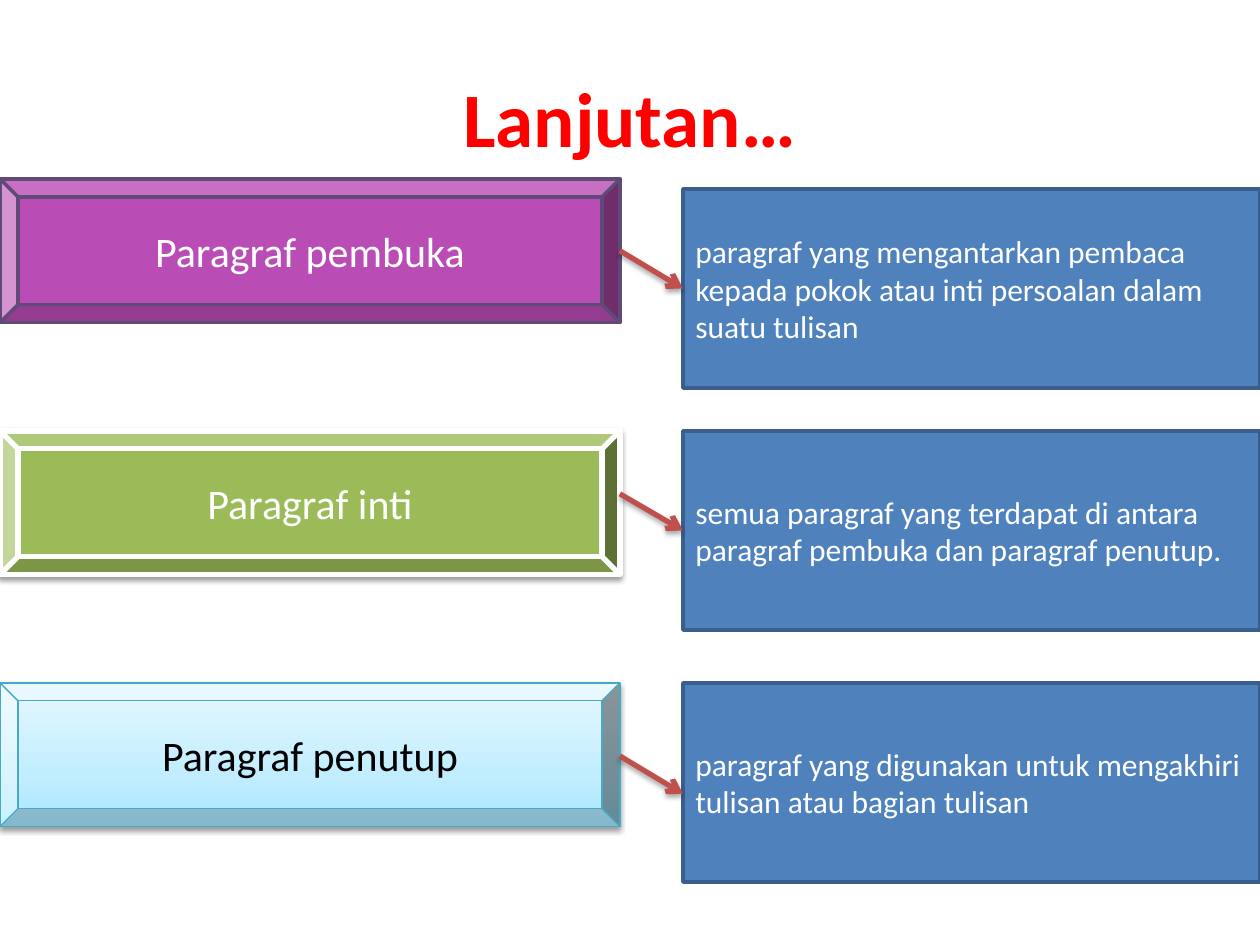
from lxml.etree import SubElement
from pptx import Presentation
from pptx.dml.color import RGBColor
from pptx.enum.shapes import MSO_CONNECTOR, MSO_SHAPE
from pptx.enum.text import MSO_ANCHOR, PP_ALIGN
from pptx.oxml.ns import qn
from pptx.util import Inches, Pt

FONT = "Calibri"
WHITE = RGBColor(0xFF, 0xFF, 0xFF)
BLACK = RGBColor(0, 0, 0)
RED = RGBColor(0xFF, 0, 0)
PURPLE = RGBColor(0xBA, 0x4C, 0xB5)
DARK_PURPLE = RGBColor(0x5F, 0x4A, 0x78)
GREEN = RGBColor(0x9B, 0xBB, 0x59)
TEAL = RGBColor(0x46, 0xAA, 0xC5)
BLUE = RGBColor(0x4F, 0x81, 0xBD)
DARK_BLUE = RGBColor(0x3A, 0x5F, 0x8C)
BRICK = RGBColor(0xC0, 0x50, 0x4D)
# Gradient stops, bottom to top: percent, colour
ICE = [(0, RGBColor(0xA7, 0xE6, 0xFF)), (35, RGBColor(0xC1, 0xED, 0xFF)),
       (100, RGBColor(0xE7, 0xF8, 0xFF))]

TITLE = "Lanjutan…"
PARAGRAPH_TYPES = [
    dict(label="Paragraf pembuka", fill=PURPLE, outline=DARK_PURPLE, weight=2,
         ink=WHITE, shadow=False, meaning_top=1.5, arrow_top=1.99,
         meaning="paragraf yang mengantarkan pembaca kepada pokok atau inti "
                 "persoalan dalam suatu tulisan"),
    dict(label="Paragraf inti", fill=GREEN, outline=WHITE, weight=3,
         ink=WHITE, shadow=True, meaning_top=3.42, arrow_top=3.92,
         meaning="semua paragraf yang terdapat di antara paragraf pembuka "
                 "dan paragraf penutup."),
    dict(label="Paragraf penutup", fill=ICE, outline=TEAL, weight=0.75,
         ink=BLACK, shadow=True, meaning_top=5.42, arrow_top=6.0,
         meaning="paragraf yang digunakan untuk mengakhiri tulisan atau "
                 "bagian tulisan"),
]
FIRST_TOP, ROW_STEP = 1.42, 2
LABEL_WIDTH, LABEL_HEIGHT = 4.92, 1.14
MEANING_LEFT, MEANING_WIDTH, MEANING_HEIGHT = 5.42, 4.58, 1.58
ARROW_DROP = 0.3


def write(shape, text, size, color, align, bold=False):
    frame = shape.text_frame
    frame.text = text
    frame.word_wrap = True
    frame.vertical_anchor = MSO_ANCHOR.MIDDLE
    paragraph = frame.paragraphs[0]
    paragraph.alignment = align
    font = paragraph.runs[0].font
    font.name, font.size, font.bold = FONT, Pt(size), bold
    font.color.rgb = color


def fill_gradient(shape, stops):
    shape.fill.gradient()
    shape.fill.gradient_angle = 90
    stop_list = shape._element.spPr.find(".//" + qn("a:gsLst"))
    for old in list(stop_list):
        stop_list.remove(old)
    for percent, color in stops:
        stop = SubElement(stop_list, qn("a:gs"), pos=str(percent * 1000))
        SubElement(stop, qn("a:srgbClr"), val=str(color))


def add_panel(kind, left, top, width, height, fill, outline, weight):
    panel = slide.shapes.add_shape(kind, Inches(left), Inches(top),
                                   Inches(width), Inches(height))
    if isinstance(fill, list):
        fill_gradient(panel, fill)
    else:
        panel.fill.solid()
        panel.fill.fore_color.rgb = fill
    panel.line.color.rgb = outline
    panel.line.width = Pt(weight)
    panel.shadow.inherit = False
    return panel


def cast_shadow(effects, distance, opacity):
    """Fill an effect list with a soft black shadow that falls straight down."""
    shadow = SubElement(effects, qn("a:outerShdw"), blurRad=str(Pt(3.1)),
                        dist=str(Pt(distance)), dir="5400000", rotWithShape="0")
    color = SubElement(shadow, qn("a:srgbClr"), val="000000")
    SubElement(color, qn("a:alpha"), val=str(opacity * 1000))


def add_arrow(top, meaning):
    end = top + ARROW_DROP
    arrow = slide.shapes.add_connector(
        MSO_CONNECTOR.STRAIGHT, Inches(LABEL_WIDTH), Inches(top),
        Inches(MEANING_LEFT), Inches(end))
    middle = meaning.top + meaning.height / 2
    if abs(Inches(end) - middle) < Inches(0.02):
        arrow.end_connect(meaning, 1)
    arrow.line.color.rgb = BRICK
    arrow.line.width = Pt(3)
    properties = arrow._element.spPr
    SubElement(properties.find(qn("a:ln")), qn("a:tailEnd"), type="arrow")
    cast_shadow(SubElement(properties, qn("a:effectLst")), 1.8, 35)


prs = Presentation()
prs.slide_width, prs.slide_height = Inches(10), Inches(7.5)
slide = prs.slides.add_slide(prs.slide_layouts[6])

title = slide.shapes.add_textbox(Inches(0.5), Inches(0.3), Inches(9), Inches(1.25))
write(title, TITLE, 44, RED, PP_ALIGN.CENTER, bold=True)

for row, item in enumerate(PARAGRAPH_TYPES):
    label = add_panel(MSO_SHAPE.BEVEL, 0, FIRST_TOP + row * ROW_STEP,
                      LABEL_WIDTH, LABEL_HEIGHT,
                      item["fill"], item["outline"], item["weight"])
    write(label, item["label"], 24, item["ink"], PP_ALIGN.CENTER)
    if item["shadow"]:
        cast_shadow(label._element.spPr.find(qn("a:effectLst")), 1.6, 38)

    meaning = add_panel(MSO_SHAPE.RECTANGLE, MEANING_LEFT, item["meaning_top"],
                        MEANING_WIDTH, MEANING_HEIGHT, BLUE, DARK_BLUE, 2)
    write(meaning, item["meaning"], 18, WHITE, PP_ALIGN.LEFT)
    add_arrow(item["arrow_top"], meaning)

prs.save("out.pptx")
